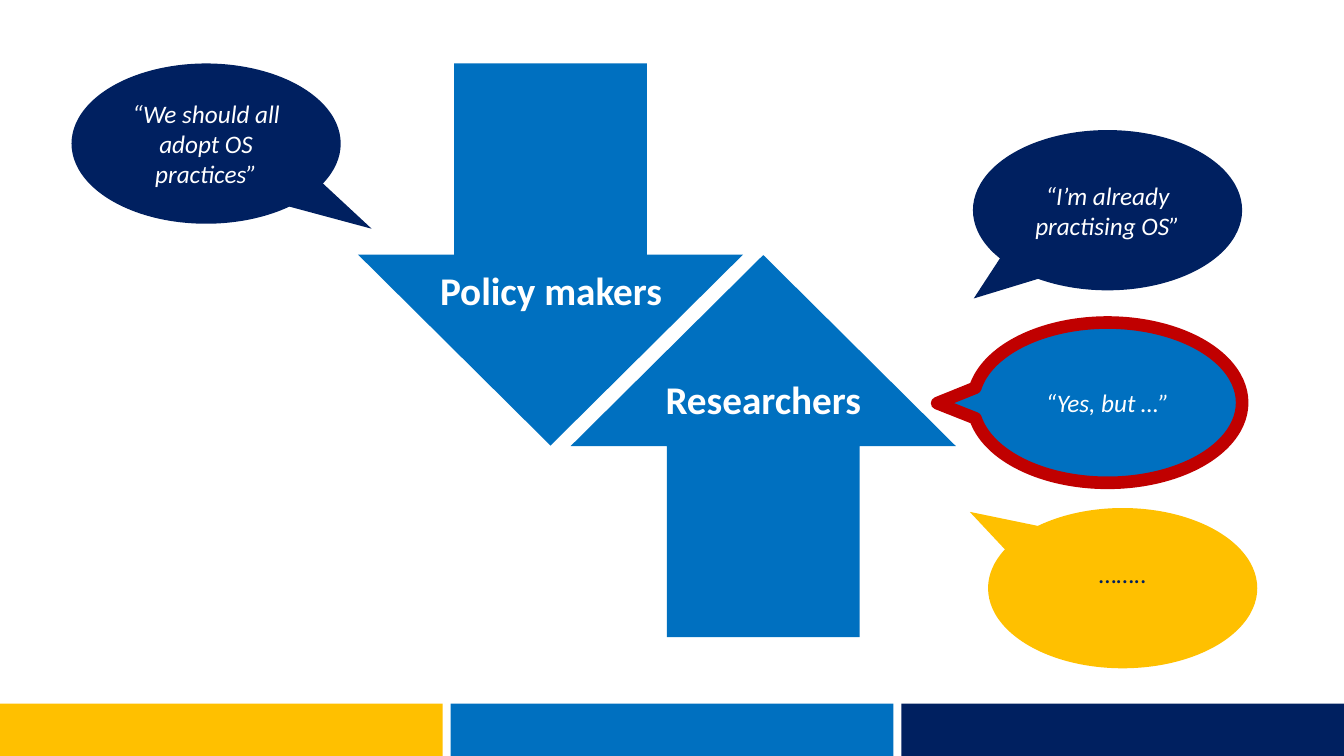
"""Build the slide on policy makers and researchers facing open science."""
import pptx
import pptx.dml.color
import pptx.enum.shapes
import pptx.enum.text
import pptx.util

Inches = pptx.util.Inches
Pt = pptx.util.Pt
Preset = pptx.enum.shapes.MSO_SHAPE
COLOURS = {"blue": "0070C0", "navy": "002060", "yellow": "FFC000", "red": "C00000", "white": "FFFFFF"}
QUOTE = {"size": Pt(18), "italic": True}
HEADING = {"size": Pt(28), "bold": True}


def colour(name):
    """Return the named palette colour."""
    return pptx.dml.color.RGBColor.from_string(COLOURS[name])


def add_block(slide, preset, box, fill):
    """Add a flat preset shape without outline."""
    block = slide.shapes.add_shape(preset, *map(Inches, box))
    block.shadow.inherit = False
    block.fill.solid()
    block.fill.fore_color.rgb = colour(fill)
    block.line.fill.background()
    return block


def write(frame, words, text_colour, formats):
    """Write one centred line of formatted text."""
    paragraph = frame.paragraphs[0]
    paragraph.alignment = pptx.enum.text.PP_ALIGN.CENTER
    run = paragraph.add_run()
    run.text = words
    run.font.color.rgb = colour(text_colour)
    for attribute, value in {"name": "Calibri", **formats}.items():
        setattr(run.font, attribute, value)


def add_group_name(slide, box, words):
    """Add the heading that lies over an arrow."""
    heading = slide.shapes.add_textbox(*map(Inches, box))
    heading.text_frame.word_wrap = False
    write(heading.text_frame, words, "white", HEADING)


def add_quote(slide, left, top, tail, fill, words, text_colour="white", formats=QUOTE):
    """Add a speech bubble whose tail ends at the given offset."""
    bubble = add_block(slide, Preset.OVAL_CALLOUT, (left, top, 2.67, 1.59), fill)
    for index, offset in enumerate(tail):
        bubble.adjustments[index] = offset
    bubble.text_frame.word_wrap = True
    bubble.text_frame.vertical_anchor = pptx.enum.text.MSO_ANCHOR.MIDDLE
    write(bubble.text_frame, words, text_colour, formats)
    return bubble


def main():
    """Build and save the slide."""
    deck = pptx.Presentation()
    deck.slide_width, deck.slide_height = Inches(13.33), Inches(7.5)
    slide = deck.slides.add_slide(deck.slide_layouts[6])

    researchers_arrow = add_block(slide, Preset.DOWN_ARROW, (5.66, 2.53, 3.82, 3.79), "blue")
    researchers_arrow.rotation = 180
    for index, fill in enumerate(("yellow", "blue", "navy")):
        add_block(slide, Preset.RECTANGLE, (4.47 * index, 6.98, 4.39, 0.52), fill)
    add_block(slide, Preset.DOWN_ARROW, (3.55, 0.63, 3.82, 3.79), "blue")
    add_group_name(slide, (4.25, 2.59, 2.43, 0.57), "Policy makers")
    add_group_name(slide, (6.49, 3.67, 2.16, 0.57), "Researchers")

    add_quote(slide, 0.71, 0.63, (0.615, 0.531), "navy", "“We should all adopt OS practices”")
    add_quote(slide, 9.65, 1.29, (-0.497, 0.551), "navy", "“I’m already practising OS”")
    objection = add_quote(slide, 9.65, 3.2, (-0.633, 0.003), "blue", "“Yes, but …”")
    objection.line.color.rgb = colour("red")
    objection.line.width = Pt(9)
    open_answer = add_quote(slide, 9.8, 5.04, (-0.568, -0.476), "yellow", "……..", "navy", {"size": Pt(18)})
    open_answer.text_frame.margin_bottom = Inches(0.35)

    deck.save("out.pptx")


if __name__ == "__main__":
    main()
